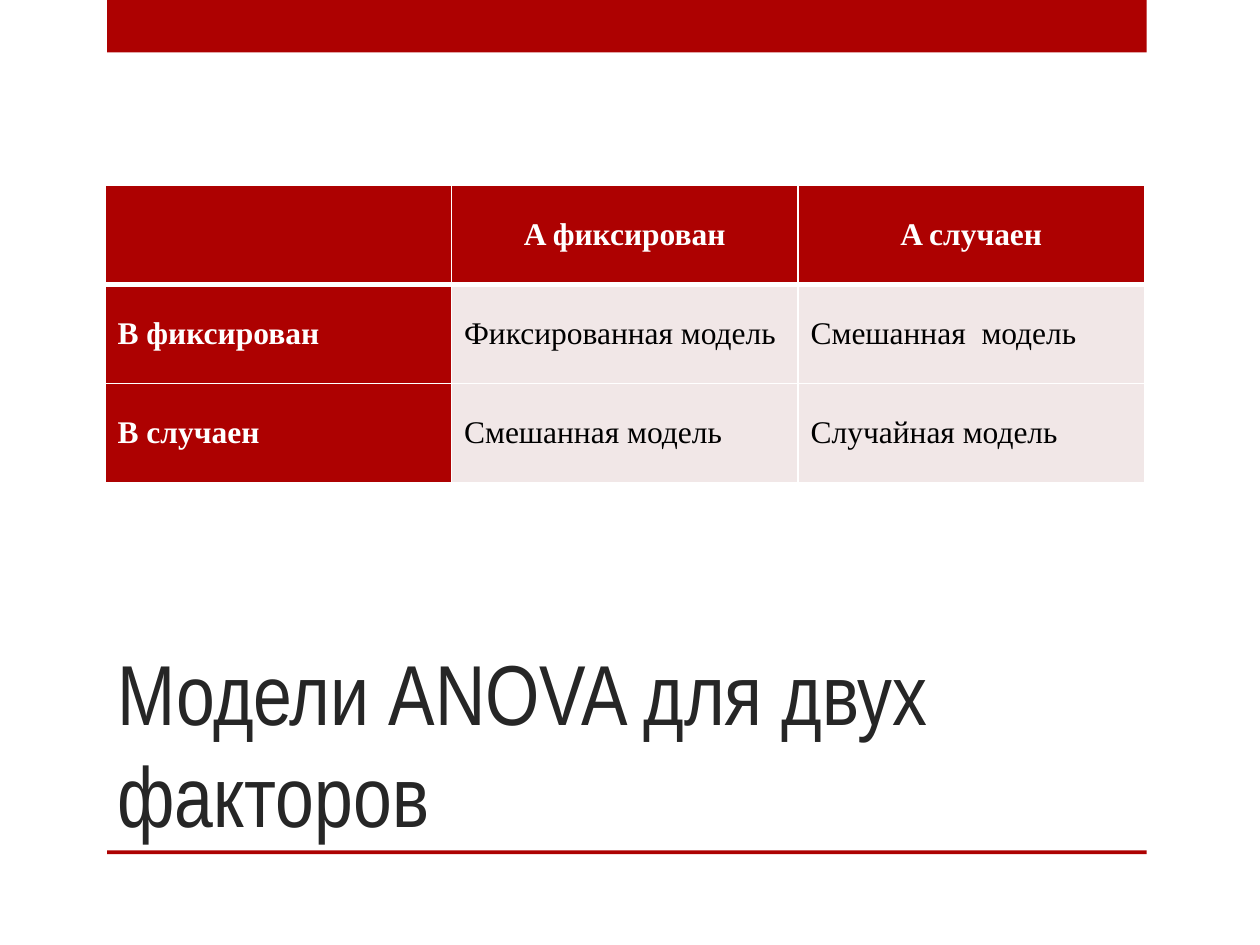
import pptx
import pptx.dml.color
import pptx.enum.shapes
import pptx.enum.text
import pptx.oxml
import pptx.oxml.ns
import pptx.util

Pt = pptx.util.Pt
RGBColor = pptx.dml.color.RGBColor
Align = pptx.enum.text.PP_ALIGN
Anchor = pptx.enum.text.MSO_ANCHOR

RED = RGBColor(0xAD, 0x01, 0x01)
PALE = RGBColor(0xF1, 0xE7, 0xE7)
WHITE = RGBColor(0xFF, 0xFF, 0xFF)
BLACK = RGBColor(0, 0, 0)
CHARCOAL = RGBColor(0x26, 0x26, 0x26)

MODELS = [
    ["", "A фиксирован", "A случаен"],
    ["B фиксирован", "Фиксированная модель", "Смешанная  модель"],
    ["B случаен", "Смешанная модель", "Случайная модель"],
]


def write(frame, text, *, font, size, color, bold=False, align=Align.LEFT):
    paragraph = frame.paragraphs[0]
    paragraph.alignment = align
    run = paragraph.add_run()
    run.text = text
    run.font.name = font
    run.font.size = Pt(size)
    run.font.bold = bold
    run.font.color.rgb = color


class ModelSlide:
    title_font = "Arial Narrow"
    table_font = "Times New Roman"

    def __init__(self, slide):
        self.slide = slide

    def band(self, left, top, width, height):
        band = self.slide.shapes.add_shape(
            pptx.enum.shapes.MSO_SHAPE.RECTANGLE,
            Pt(left), Pt(top), Pt(width), Pt(height))
        band.shadow.inherit = False
        band.fill.solid()
        band.fill.fore_color.rgb = RED
        band.line.fill.background()

    def title(self, text, left, top, width, height):
        title = self.slide.shapes.add_textbox(
            Pt(left), Pt(top), Pt(width), Pt(height))
        frame = title.text_frame
        frame.word_wrap = True
        frame.vertical_anchor = Anchor.BOTTOM
        write(frame, text, font=self.title_font, size=48.6, color=CHARCOAL)

    def border(self, cell, side, width):
        line = pptx.oxml.parse_xml(
            f'<a:{side} {pptx.oxml.ns.nsdecls("a")} w="{Pt(width)}">'
            f'<a:solidFill><a:srgbClr val="{WHITE}"/></a:solidFill></a:{side}>')
        cell._tc.get_or_add_tcPr().append(line)

    def table(self, rows, left, top, width, height):
        table = self.slide.shapes.add_table(
            len(rows), len(rows[0]),
            Pt(left), Pt(top), Pt(width), Pt(height)).table
        for r, row in enumerate(rows):
            for c, text in enumerate(row):
                self.cell(table.cell(r, c), text, r == 0, c == 0, r == 1)

    def cell(self, cell, text, in_header, in_first_column, below_header):
        heading = in_header or in_first_column
        cell.vertical_anchor = Anchor.MIDDLE
        self.border(cell, "lnL", 1)
        self.border(cell, "lnR", 1)
        self.border(cell, "lnT", 3 if below_header else 1)
        self.border(cell, "lnB", 3 if in_header else 1)
        cell.fill.solid()
        cell.fill.fore_color.rgb = RED if heading else PALE
        if text:
            write(cell.text_frame, text, font=self.table_font, size=18,
                  color=WHITE if heading else BLACK, bold=heading,
                  align=Align.CENTER if in_header else Align.LEFT)


def main():
    deck = pptx.Presentation()
    deck.slide_width = Pt(720)
    deck.slide_height = Pt(540)
    page = ModelSlide(deck.slides.add_slide(deck.slide_layouts[6]))
    page.band(61.2, 0, 594, 30)
    page.band(61.2, 486, 594, 2.16)
    page.title("Модели ANOVA для двух факторов", 60, 360, 534, 126)
    page.table(MODELS, 60, 105.8, 594, 170)
    deck.save("out.pptx")


if __name__ == "__main__":
    main()
